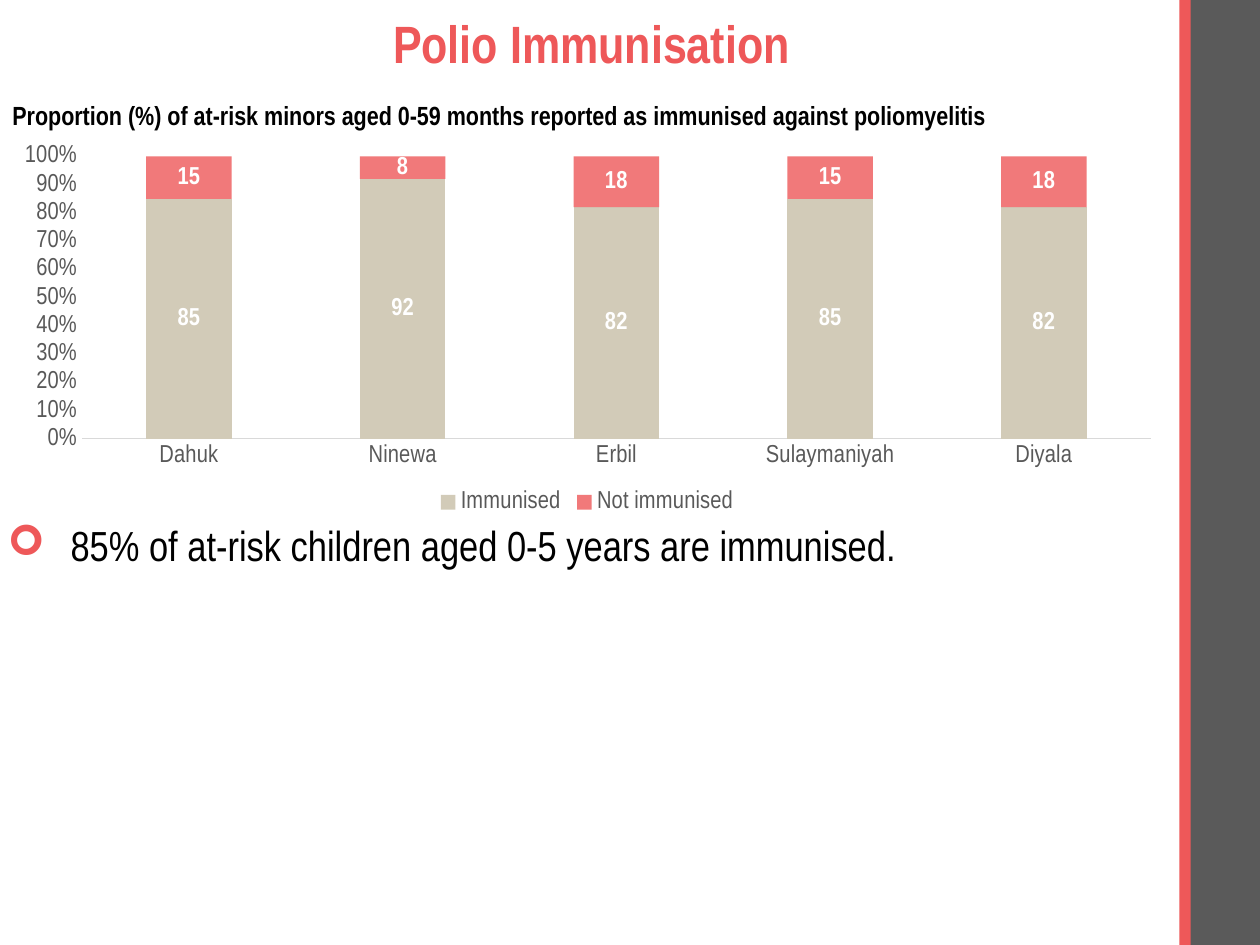
from dataclasses import dataclass

from lxml import etree
from pptx import Presentation
from pptx import util as u
from pptx.chart.data import CategoryChartData
from pptx.dml.color import RGBColor
from pptx.enum import chart as ch, shapes, text
from pptx.oxml import parse_xml
from pptx.oxml.ns import nsdecls, qn

COLORS = {"red": "EE5859", "grey": "5A5A5A", "sand": "D2CBB8", "axis": "D9D9D9",
          "label": "595959", "black": "000000", "white": "FFFFFF"}
FONT = "Arial Narrow"


@dataclass
class SideBar:
    left: float
    width: float
    color: str


@dataclass
class Series:
    name: str
    values: tuple
    color: str
    opacity: int = 100


BARS = [SideBar(9.43, 0.57, "grey"), SideBar(9.36, 0.09, "red")]
GOVERNORATES = ["Dahuk", "Ninewa", "Erbil", "Sulaymaniyah", "Diyala"]
SERIES = [Series("Immunised", (85, 92, 82, 85, 82), "sand"),
          Series("Not immunised", (15, 8, 18, 15, 18), "red", 80)]


def rgb(name: str) -> RGBColor:
    return RGBColor.from_string(COLORS[name])


def style(font, size: float, color: str, bold: bool = False) -> None:
    font.name = FONT
    font.size = u.Pt(size)
    font.bold = bold
    font.color.rgb = rgb(color)


def place(sp, left: float, top: float, width: float, height: float) -> None:
    sp.left, sp.top = u.Inches(left), u.Inches(top)
    sp.width, sp.height = u.Inches(width), u.Inches(height)


def write(tf, words: str, size: float, color: str, bold: bool = False):
    tf.text = words
    tf.word_wrap = True
    p = tf.paragraphs[0]
    style(p.runs[0].font, size, color, bold)
    return p


def add_bar(s, bar: SideBar) -> None:
    sp = s.shapes.add_shape(shapes.MSO_SHAPE.RECTANGLE, u.Inches(bar.left), 0,
                            u.Inches(bar.width), u.Inches(7.5))
    sp.shadow.inherit = False
    sp.fill.solid()
    sp.fill.fore_color.rgb = rgb(bar.color)
    sp.line.fill.background()


def add_bullet(p, char: str, color: str, indent: float) -> None:
    pPr = p._p.get_or_add_pPr()
    pPr.set("marL", str(u.Inches(indent)))
    pPr.set("indent", str(-u.Inches(indent)))
    clr = etree.SubElement(pPr, qn("a:buClr"))
    etree.SubElement(clr, qn("a:srgbClr"), val=COLORS[color])
    etree.SubElement(pPr, qn("a:buFont"), typeface="Wingdings")
    etree.SubElement(pPr, qn("a:buChar"), char=char)


def format_series(ser, data: Series) -> None:
    ser.format.fill.solid()
    ser.format.fill.fore_color.rgb = rgb(data.color)
    if data.opacity < 100:
        clr = ser.format.fill._xPr.find(".//" + qn("a:srgbClr"))
        etree.SubElement(clr, qn("a:alpha"), val=str(data.opacity * 1000))
    labels = ser.data_labels
    labels.show_value = True
    labels.number_format = "0"
    labels.number_format_is_linked = False
    style(labels.font, 14, "white", True)


def add_immunisation_chart(s) -> None:
    data = CategoryChartData(number_format="0")
    data.categories = GOVERNORATES
    for item in SERIES:
        data.add_series(item.name, item.values)
    chart = s.shapes.add_chart(ch.XL_CHART_TYPE.COLUMN_STACKED_100, 0, u.Inches(1.09),
                               u.Inches(9.32), u.Inches(3.03), data).chart
    style(chart.font, 14, "black")
    chart.has_title = False
    chart.has_legend = True
    chart.legend.position = ch.XL_LEGEND_POSITION.BOTTOM
    chart.legend.include_in_layout = False
    style(chart.legend.font, 14, "label")
    plot = chart.plots[0]
    plot.gap_width, plot.overlap = 150, 100
    plot.vary_by_categories = False
    for ser, item in zip(plot.series, SERIES):
        format_series(ser, item)
    for axis in (chart.category_axis, chart.value_axis):
        axis.major_tick_mark = axis.minor_tick_mark = ch.XL_TICK_MARK.NONE
        axis.has_major_gridlines = False
        style(axis.tick_labels.font, 14, "label")
    chart.category_axis.format.line.color.rgb = rgb("axis")
    chart.category_axis.format.line.width = u.Pt(0.75)
    chart.value_axis.format.line.fill.background()
    chart.value_axis.tick_labels.number_format = "0%"
    chart.value_axis.tick_labels.number_format_is_linked = False

    area = chart._chartSpace.chart.plotArea
    for old in area.findall(qn("c:layout")):
        area.remove(old)
    edges = {"x": 0.07, "y": 0.05, "w": 0.91, "h": 0.74}
    sizes = "".join(f'<c:{k} val="{v}"/>' for k, v in edges.items())
    area.insert(0, parse_xml(
        f'<c:layout {nsdecls("c")}><c:manualLayout><c:layoutTarget val="inner"/>'
        f'<c:xMode val="edge"/><c:yMode val="edge"/>{sizes}</c:manualLayout></c:layout>'))


def main() -> None:
    prs = Presentation()
    prs.slide_width, prs.slide_height = u.Inches(10), u.Inches(7.5)
    s = prs.slides.add_slide(prs.slide_layouts[1])
    for bar in BARS:
        add_bar(s, bar)

    title = s.shapes.title
    place(title, 0.35, 0, 8.69, 0.74)
    title.text_frame.vertical_anchor = text.MSO_ANCHOR.MIDDLE
    p = write(title.text_frame, "Polio Immunisation", 30, "red", True)
    p.alignment = text.PP_ALIGN.CENTER
    p.line_spacing = 0.9

    body = s.placeholders[1]
    place(body, -0.04, 4.12, 9.41, 3.03)
    p = write(body.text_frame, "85% of at-risk children aged 0-5 years are immunised.", 24, "black")
    add_bullet(p, "➢", "red", 0.5)
    p.line_spacing = 0.9
    p.space_before = u.Pt(0)

    caption = s.shapes.add_textbox(0, u.Inches(0.74), u.Inches(8.74), u.Inches(0.35))
    write(caption.text_frame, "Proportion (%) of at-risk minors aged 0-59 months reported "
          "as immunised against poliomyelitis", 15, "black", True)
    add_immunisation_chart(s)
    prs.save("out.pptx")


if __name__ == "__main__":
    main()
